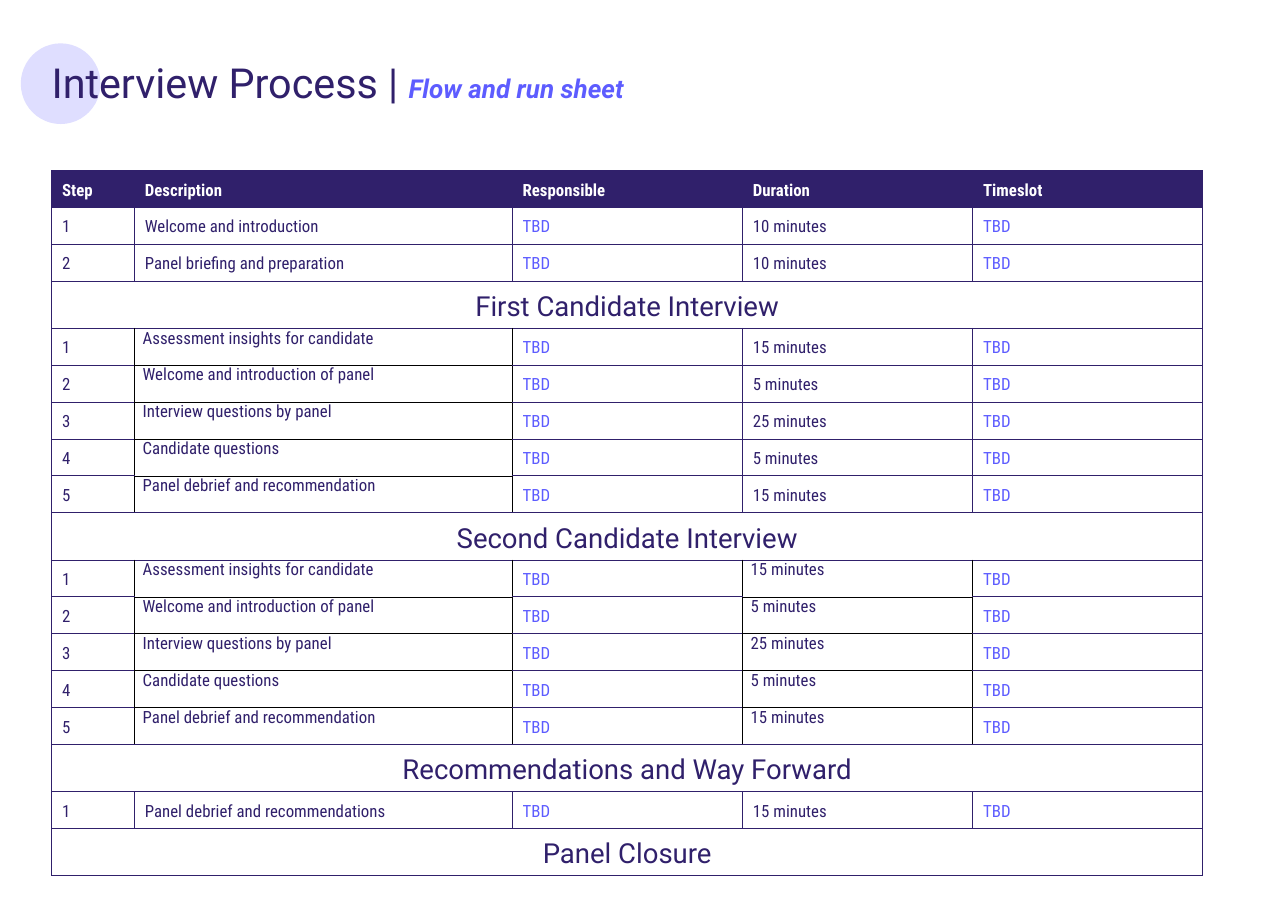
from dataclasses import dataclass

from lxml.etree import SubElement
from pptx import Presentation
from pptx.dml.color import RGBColor
from pptx.enum.shapes import MSO_SHAPE as Shape
from pptx.enum.text import MSO_ANCHOR as Anchor, PP_ALIGN as Align
from pptx.oxml.ns import qn
from pptx.slide import Slide
from pptx.table import Table, _Cell as Cell
from pptx.text.text import _Run as Run
from pptx.util import Cm, Pt

COLOURS = {
    "navy": "30206B",
    "violet": "5D5CFF",
    "lilac": "DFDEFF",
    "black": "000000",
    "white": "FFFFFF",
}
BODY_FONT, TITLE_FONT = "Roboto Condensed", "Roboto"
HEADERS = ("Step", "Description", "Responsible", "Duration", "Timeslot")
DESCRIPTION, DURATION = 1, 3
COLUMN_WIDTHS = (1.91, 8.71, 5.31, 5.31, 5.31)
STEP_HEIGHT, SECTION_HEIGHT = 0.85, 1.09
LEFT, TABLE_TOP = 1.19, 3.93


@dataclass(frozen=True)
class Step:
    description: str
    minutes: int


@dataclass(frozen=True)
class Section:
    """A titled group of steps; loose columns sit at the cell top with black borders."""
    title: str
    steps: tuple[Step, ...] = ()
    loose: frozenset[int] = frozenset()


INTERVIEW = (
    Step("Assessment insights for candidate", 15),
    Step("Welcome and introduction of panel", 5),
    Step("Interview questions by panel", 25),
    Step("Candidate questions", 5),
    Step("Panel debrief and recommendation", 15),
)
SECTIONS = (
    Section("", (Step("Welcome and introduction", 10),
                 Step("Panel briefing and preparation", 10))),
    Section("First Candidate Interview", INTERVIEW, frozenset({DESCRIPTION})),
    Section("Second Candidate Interview", INTERVIEW, frozenset({DESCRIPTION, DURATION})),
    Section("Recommendations and Way Forward",
            (Step("Panel debrief and recommendations", 15),)),
    Section("Panel Closure"),
)


@dataclass(frozen=True)
class Row:
    texts: tuple[str, ...]
    height: float = STEP_HEIGHT
    is_header: bool = False
    is_section: bool = False
    loose: frozenset[int] = frozenset()


def rgb(name: str) -> RGBColor:
    return RGBColor.from_string(COLOURS[name])


def style_run(r: Run, size: float, font: str, colour: str,
              bold: bool = False, italic: bool = False) -> None:
    r.font.size, r.font.name = Pt(size), font
    r.font.bold, r.font.italic = bold, italic
    r.font.color.rgb = rgb(colour)


def table_rows() -> list[Row]:
    """Flatten the sections into header, section and step rows."""
    rows = [Row(HEADERS, is_header=True)]
    for section in SECTIONS:
        if section.title:
            blanks = ("",) * (len(HEADERS) - 1)
            rows.append(Row((section.title, *blanks), SECTION_HEIGHT, is_section=True))
        for number, step in enumerate(section.steps, 1):
            texts = (str(number), step.description, "TBD", f"{step.minutes} minutes", "TBD")
            rows.append(Row(texts, loose=section.loose))
    return rows


def set_borders(cell: Cell, col: int, loose: frozenset[int]) -> None:
    """Draw black hairlines on loose cells and on the sides that touch one."""
    sides = {"L": {col, col - 1}, "R": {col, col + 1}, "T": {col}, "B": {col}}
    tc_pr = cell._tc.get_or_add_tcPr()
    for side, touching in sides.items():
        colour, width = ("black", 0.5) if touching & loose else ("navy", 0.75)
        ln = SubElement(tc_pr, qn(f"a:ln{side}"), w=str(Pt(width)))
        fill = SubElement(ln, qn("a:solidFill"))
        SubElement(fill, qn("a:srgbClr"), val=COLOURS[colour])


def format_cell(cell: Cell, row: Row, col: int) -> None:
    is_loose = col in row.loose
    set_borders(cell, col, row.loose)
    if row.is_header:
        cell.fill.solid()
        cell.fill.fore_color.rgb = rgb("navy")
    else:
        cell.fill.background()
    cell.vertical_anchor = Anchor.TOP if is_loose else Anchor.MIDDLE
    cell.margin_left = cell.margin_right = Cm(0.19 if is_loose else 0.24)
    cell.margin_top = cell.margin_bottom = Cm(0 if is_loose else 0.1)

    cell.text_frame.text = row.texts[col]
    p = cell.text_frame.paragraphs[0]
    p.alignment = Align.CENTER if row.is_section else Align.LEFT
    p.line_spacing = 1.0 if is_loose else 1.14
    for r in p.runs:
        if row.is_section:
            style_run(r, 18, TITLE_FONT, "navy")
        elif row.is_header:
            style_run(r, 11, BODY_FONT, "white", bold=True)
        else:
            style_run(r, 11, BODY_FONT, "violet" if r.text == "TBD" else "navy")


def fill_table(table: Table, rows: list[Row]) -> None:
    table.first_row = table.horz_banding = False
    for column, width in zip(table.columns, COLUMN_WIDTHS):
        column.width = Cm(width)
    for i, row in enumerate(rows):
        table.rows[i].height = Cm(row.height)
        for col in range(len(HEADERS)):
            format_cell(table.cell(i, col), row, col)
        if row.is_section:
            table.cell(i, 0).merge(table.cell(i, len(HEADERS) - 1))


def add_run_sheet(s: Slide) -> None:
    rows = table_rows()
    frame = s.shapes.add_table(
        len(rows), len(HEADERS), Cm(LEFT), Cm(TABLE_TOP),
        Cm(sum(COLUMN_WIDTHS)), Cm(sum(row.height for row in rows)))
    fill_table(frame.table, rows)


def add_title_circle(s: Slide) -> None:
    sp = s.shapes.add_shape(Shape.OVAL, Cm(0.48), Cm(1), Cm(1.84), Cm(1.86))
    sp.shadow.inherit = False
    sp.fill.solid()
    sp.fill.fore_color.rgb = rgb("lilac")
    sp.line.fill.background()


def add_title(s: Slide) -> None:
    tf = s.shapes.add_textbox(Cm(LEFT), Cm(1.45), Cm(23.11), Cm(2.13)).text_frame
    tf.word_wrap = True
    tf.margin_left = tf.margin_right = tf.margin_top = tf.margin_bottom = 0
    p = tf.paragraphs[0]
    p.line_spacing = 0.9
    title, subtitle = p.add_run(), p.add_run()
    title.text, subtitle.text = "Interview Process | ", "Flow and run sheet"
    style_run(title, 27, TITLE_FONT, "navy")
    style_run(subtitle, 17, TITLE_FONT, "violet", bold=True, italic=True)


def main() -> None:
    prs = Presentation()
    prs.slide_width, prs.slide_height = Cm(29.7), Cm(21)
    s = prs.slides.add_slide(prs.slide_layouts[6])
    add_title_circle(s)
    add_run_sheet(s)
    add_title(s)
    prs.save("out.pptx")


if __name__ == "__main__":
    main()
